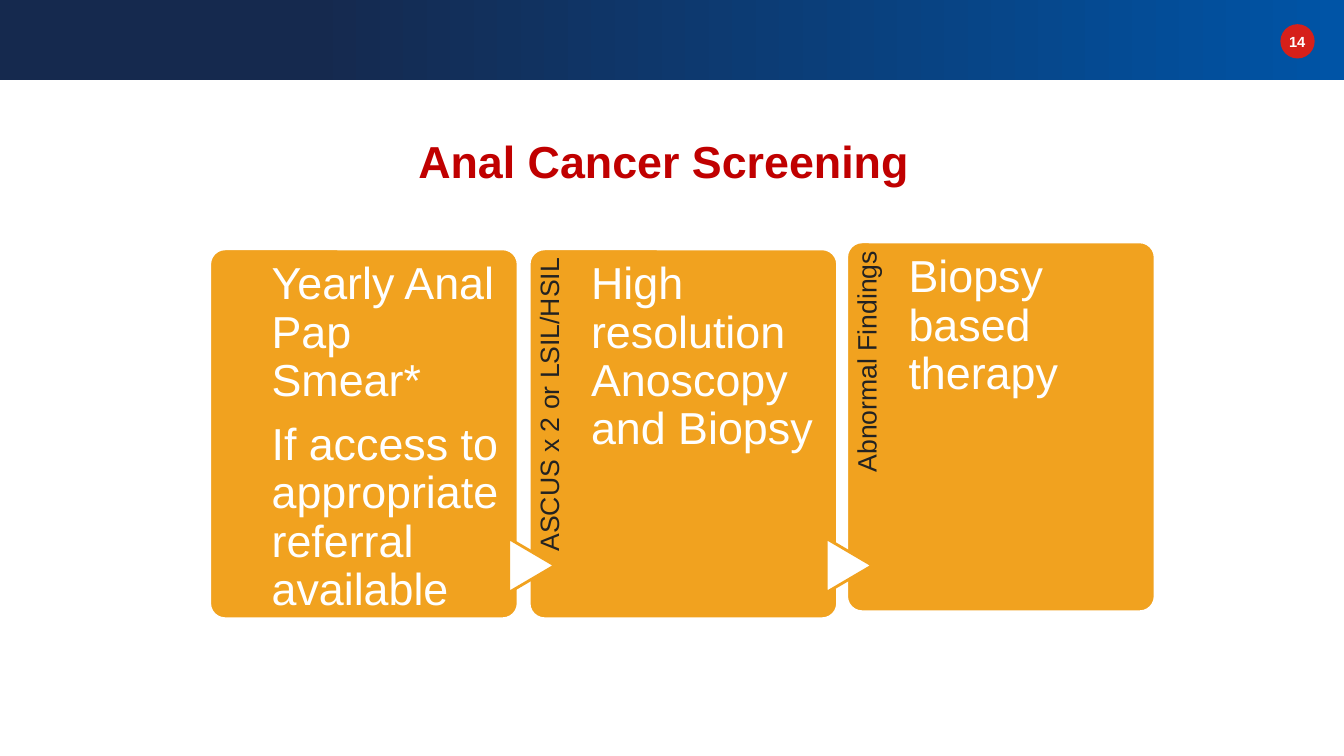
import pptx
import pptx.dml.color
import pptx.enum.shapes
import pptx.enum.text
import pptx.util

Pt = pptx.util.Pt
SHAPE = pptx.enum.shapes.MSO_SHAPE
ALIGN = pptx.enum.text.PP_ALIGN
ANCHOR = pptx.enum.text.MSO_ANCHOR

CARD_WIDTH, CARD_HEIGHT = 220.3, 264.2
LABEL_LENGTH, LABEL_DEPTH = 216.7, 43.9
ARROW_TOP = 387.4

# left, top, side label, paragraphs
STEPS = [
    (149.8, 177.8, None,
     ["Yearly Anal Pap Smear*", "If access to appropriate referral available"]),
    (378, 177.8, "ASCUS x 2 or LSIL/HSIL", ["High resolution Anoscopy and Biopsy"]),
    (604.8, 172.8, "Abnormal Findings", ["Biopsy based therapy"]),
]


def color(value):
    return pptx.dml.color.RGBColor.from_string(value)


class Page:
    font = "Arial"
    white, amber, red, dark = "FFFFFF", "F1A21F", "C00000", "222222"

    def __init__(self, deck):
        self.shapes = deck.slides.add_slide(deck.slide_layouts[6]).shapes

    def shape(self, kind, bounds, fill=None, line=None, rotation=0):
        shape = self.shapes.add_shape(kind, *map(Pt, bounds))
        shape.shadow.inherit = False
        shape.rotation = rotation
        if fill:
            shape.fill.solid()
            shape.fill.fore_color.rgb = color(fill)
        if line:
            shape.line.color.rgb = color(line)
            shape.line.width = Pt(2)
        else:
            shape.line.fill.background()
        return shape

    def gradient_band(self, bounds, stops):
        fill = self.shape(SHAPE.RECTANGLE, bounds).fill
        fill.gradient()
        fill.gradient_angle = 0
        for stop, (position, value) in zip(fill.gradient_stops, stops):
            stop.position = position
            stop.color.rgb = color(value)

    def text(self, bounds, lines, size, ink, bold=False, insets=(0, 0, 0, 0),
             anchor=ANCHOR.TOP, rotation=0, **paragraph_format):
        box = self.shapes.add_textbox(*map(Pt, bounds))
        box.rotation = rotation
        frame = box.text_frame
        frame.word_wrap = True
        frame.vertical_anchor = anchor
        for side, inset in zip(("left", "top", "right", "bottom"), insets):
            setattr(frame, f"margin_{side}", Pt(inset))
        for index, line in enumerate(lines):
            para = frame.add_paragraph() if index else frame.paragraphs[0]
            for name, value in paragraph_format.items():
                setattr(para, name, value)
            span = para.add_run()
            span.text = line
            font_format = {"name": self.font, "size": Pt(size), "bold": bold}
            for name, value in font_format.items():
                setattr(span.font, name, value)
            span.font.color.rgb = color(ink)

    def step(self, left, top, label, lines):
        """Draw one card, with its side label and incoming arrow if it has a label."""
        card = self.shape(SHAPE.ROUNDED_RECTANGLE, (left, top, CARD_WIDTH, CARD_HEIGHT),
                          self.amber, self.white)
        card.adjustments[0] = 0.05
        spacing = {"line_spacing": 0.9, "space_after": Pt(11.2)}
        if label:
            self.text((left - 86.4, top + 86.4, LABEL_LENGTH, LABEL_DEPTH), [label], 19,
                      self.dark, insets=(0, 5, 6.5, 0), rotation=270,
                      alignment=ALIGN.RIGHT, **spacing)
            self.shape(SHAPE.FLOWCHART_EXTRACT, (left - 17.6, ARROW_TOP, 38.9, 33.1),
                       self.white, self.amber, rotation=90)
        self.text((left + 44.2, top, 164.2, CARD_HEIGHT), lines, 32, self.white,
                  insets=(0, 8.6, 0, 0), **spacing)


def main():
    deck = pptx.Presentation()
    deck.slide_width, deck.slide_height = Pt(960), Pt(540)
    page = Page(deck)
    page.gradient_band((0, 0, 960, 57.4), [(0.23, "15294E"), (1, "0054A6")])
    page.shape(SHAPE.OVAL, (914.6, 17.3, 24.5, 24.5), "D6201A")
    centered = {"bold": True, "anchor": ANCHOR.MIDDLE, "alignment": ALIGN.CENTER}
    page.text((910.8, 19.4, 31.7, 20.2), ["14"], 10.5, page.white, **centered)
    page.text((49, 89.3, 850.3, 51.1), ["Anal Cancer Screening"], 32, page.red, **centered)
    for step in STEPS:
        page.step(*step)
    deck.save("out.pptx")


if __name__ == "__main__":
    main()
